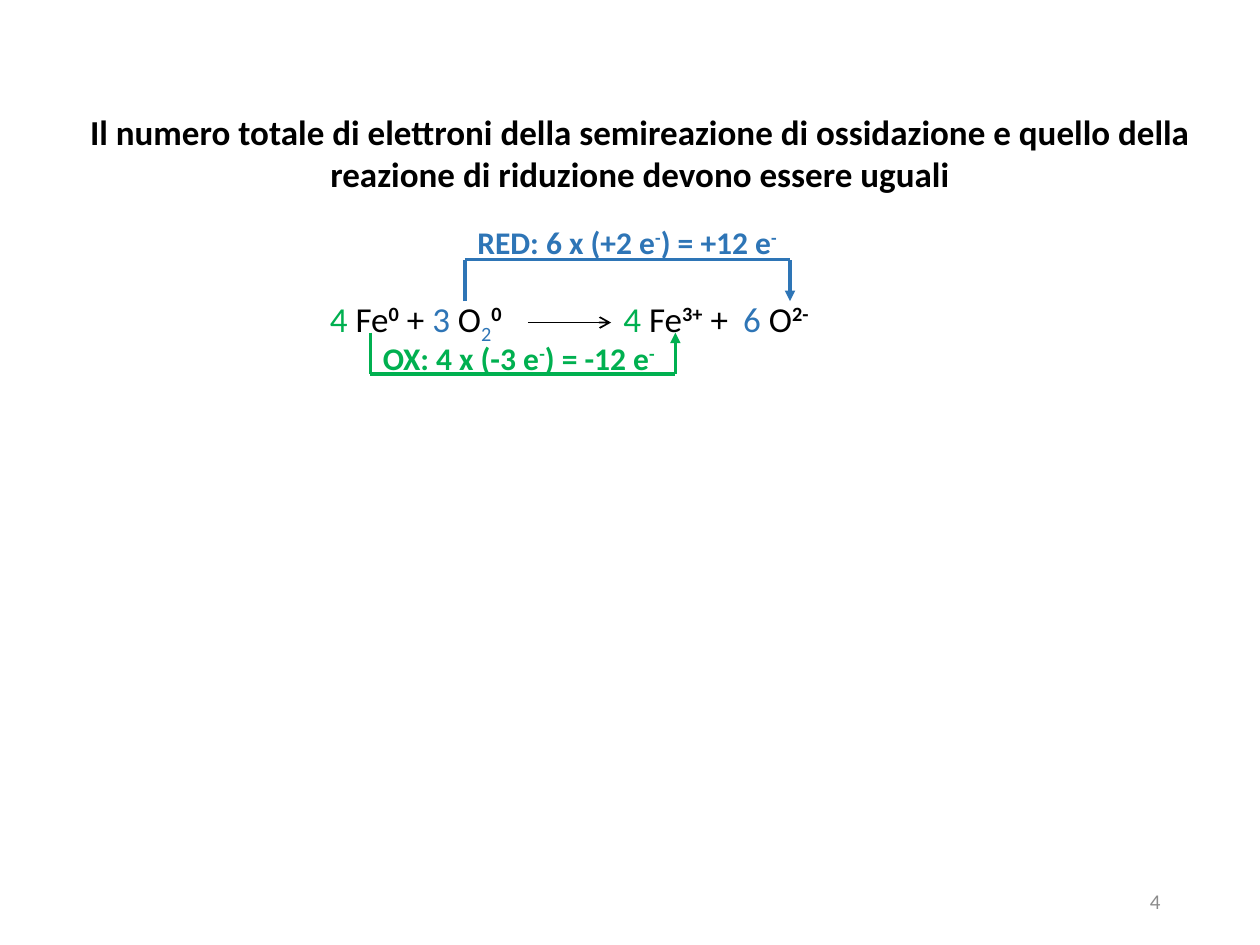
from lxml import etree
from pptx import Presentation
from pptx.dml import color as dml
from pptx.enum import shapes, text
from pptx.oxml import ns
from pptx.util import Inches, Pt

COLORS = {"black": "000000", "green": "00B050", "blue": "2E75B6", "gray": "8C8C8C"}
SUPERSCRIPT, SUBSCRIPT = 30000, -25000


def add_run(paragraph, content, size=20, color="black", bold=False, baseline=0):
    """Append formatted text to a paragraph."""
    run = paragraph.add_run()
    run.text = content
    run.font.name = "Calibri"
    run.font.size = Pt(size)
    run.font.bold = bold
    run.font.color.rgb = dml.RGBColor.from_string(COLORS[color])
    if baseline:
        run.font._element.set("baseline", str(baseline))


def prepare_frame(shape, align, anchor=text.MSO_ANCHOR.TOP, space_after=0):
    """Set up a wrapping text frame and return its first paragraph."""
    frame = shape.text_frame
    frame.word_wrap = True
    frame.auto_size = text.MSO_AUTO_SIZE.NONE
    frame.vertical_anchor = anchor
    paragraph = frame.paragraphs[0]
    paragraph.alignment = align
    paragraph.space_after = Pt(space_after)
    return paragraph


def add_box(slide, left, top, width, height):
    """Add a text box measured in inches."""
    return slide.shapes.add_textbox(*map(Inches, (left, top, width, height)))


def add_title(slide, content):
    """Fill and place the title placeholder."""
    title = slide.shapes.title
    title.left, title.top = Inches(0.33), Inches(0.83)
    title.width, title.height = Inches(9.5), Inches(6.58)
    paragraph = prepare_frame(title, text.PP_ALIGN.CENTER, space_after=12)
    add_run(paragraph, content, bold=True)


def add_line(slide, start, end, color, width, **arrows):
    """Add a straight line with optional headEnd or tailEnd arrows."""
    line = slide.shapes.add_connector(
        shapes.MSO_CONNECTOR.STRAIGHT, *map(Inches, (*start, *end))
    )
    line.line.width = Pt(width)
    line.line.color.rgb = dml.RGBColor.from_string(COLORS[color])
    properties = line._element.spPr
    for name in ("headEnd", "tailEnd"):
        if name in arrows:
            outline = line.line._get_or_add_ln()
            etree.SubElement(outline, ns.qn(f"a:{name}"), type=arrows[name])
    etree.SubElement(properties, ns.qn("a:effectLst"))


def add_bracket(slide, left, right, open_y, closed_y, color):
    """Link reactant and product with a bracket pointing at the product."""
    add_line(slide, (left, open_y), (left, closed_y), color, 2)
    add_line(slide, (right, open_y), (right, closed_y), color, 2, headEnd="triangle")
    add_line(slide, (left, closed_y), (right, closed_y), color, 2)


def add_electron_label(slide, left, top, width, parts, color):
    """Add an electron balance, each part followed by a superscript minus."""
    paragraph = prepare_frame(add_box(slide, left, top, width, 0.4), text.PP_ALIGN.LEFT)
    for part in parts:
        add_run(paragraph, part, size=18, color=color, bold=True)
        add_run(paragraph, "-", size=18, color=color, bold=True, baseline=SUPERSCRIPT)


def add_equation(slide):
    """Add the balanced reaction and its arrow."""
    box = add_box(slide, 1.52, 1.89, 6.67, 1.28)
    box.text_frame.margin_top = Inches(0.47)
    paragraph = prepare_frame(box, text.PP_ALIGN.JUSTIFY, space_after=6)
    tabs = etree.SubElement(paragraph._p.get_or_add_pPr(), ns.qn("a:tabLst"))
    for position in (1, 3.33, 4.28):
        etree.SubElement(tabs, ns.qn("a:tab"), pos=str(Inches(position)), algn="l")
    charge = {"bold": True, "baseline": SUPERSCRIPT}
    for content, style in (
        ("\t4 ", {"color": "green"}),
        ("Fe", {}),
        ("0", charge),
        (" + ", {}),
        ("3", {"color": "blue"}),
        (" O", {}),
        ("2", {"color": "blue", "baseline": SUBSCRIPT}),
        ("0", charge),
        ("\t4", {"color": "green"}),
        (" Fe", {}),
        ("3+", charge),
        (" +", {}),
        ("\t6 ", {"color": "blue"}),
        ("O", {}),
        ("2-", charge),
    ):
        add_run(paragraph, content, **style)
    add_line(slide, (4.19, 2.56), (4.85, 2.56), "black", 1, tailEnd="arrow")


def add_slide_number(slide, number):
    """Add the page number at the lower right."""
    box = add_box(slide, 7.06, 6.95, 2.25, 0.4)
    paragraph = prepare_frame(box, text.PP_ALIGN.RIGHT, text.MSO_ANCHOR.MIDDLE)
    add_run(paragraph, number, size=12, color="gray")


def main():
    """Build and save the redox balance slide."""
    presentation = Presentation()
    presentation.slide_width, presentation.slide_height = Inches(10), Inches(7.5)
    slide = presentation.slides.add_slide(presentation.slide_layouts[5])
    add_title(
        slide,
        "Il numero totale di elettroni della semireazione di ossidazione "
        "e quello della reazione di riduzione devono essere uguali",
    )
    add_slide_number(slide, "4")
    add_equation(slide)
    add_bracket(slide, 2.94, 5.36, 2.64, 2.97, "green")
    add_bracket(slide, 3.69, 6.27, 2.39, 2.06, "blue")
    add_electron_label(slide, 3.69, 1.72, 2.75, ("RED: 6 x (+2 e", ") = +12 e"), "blue")
    add_electron_label(slide, 2.94, 2.64, 2.5, ("OX: 4 x (-3 e", ") = -12 e"), "green")
    presentation.save("out.pptx")


if __name__ == "__main__":
    main()
